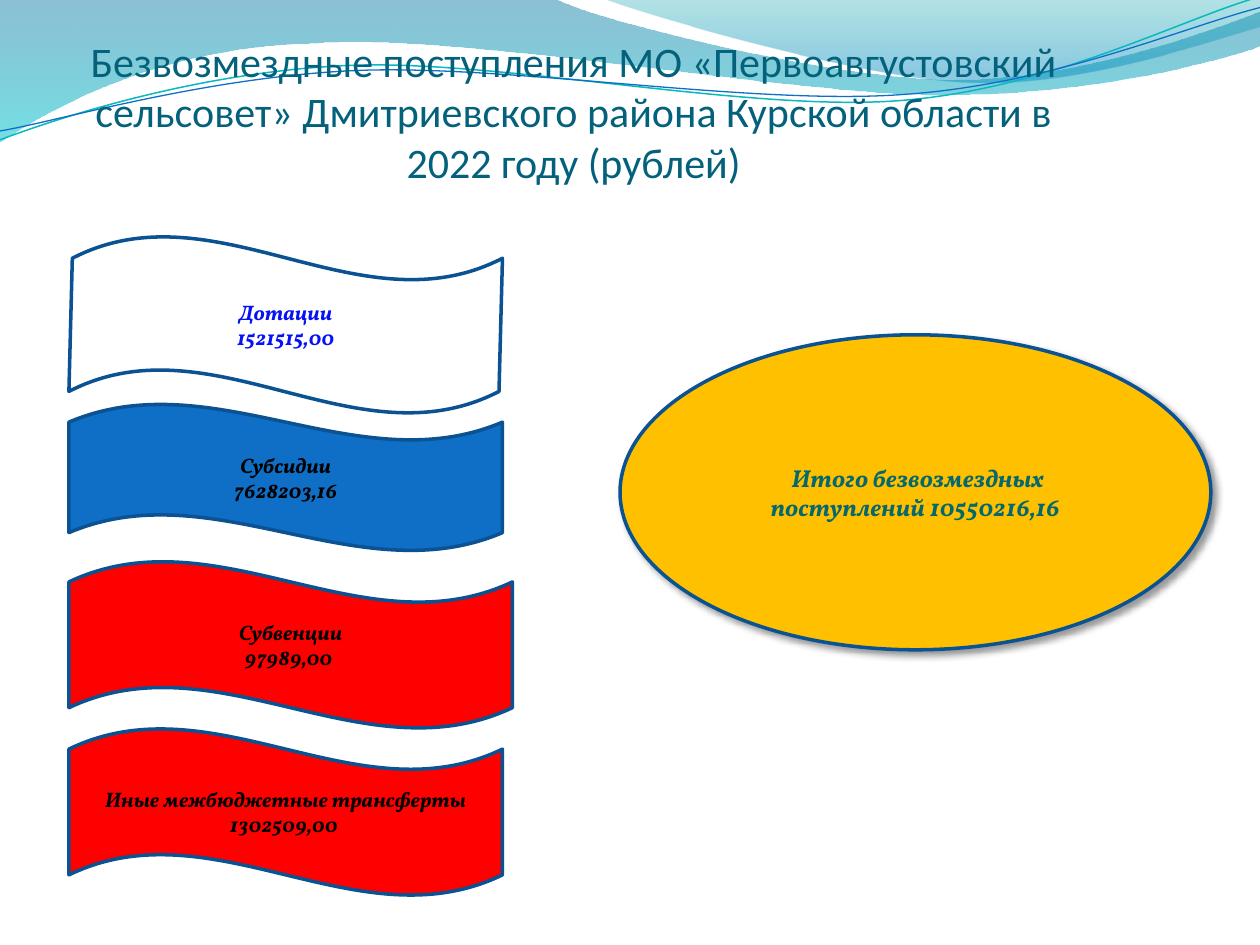
"""Build the slide on gratuitous receipts of the municipal budget."""
from dataclasses import dataclass

import lxml.etree
import pptx
import pptx.dml.color
import pptx.enum.shapes
import pptx.enum.text
import pptx.oxml
import pptx.oxml.ns
import pptx.util

COLORS = {
    "background": "FFFFFF", "title": "04617B", "outline": "0B5292", "grants": "0611F4",
    "blue": "0F6FC6", "red": "FF0000", "gold": "FFC000", "teal": "06686C",
    "black": "000000", "line_teal": "0AB8BF", "band_blue": "0074A1",
    "band_cyan": "00C6CF", "crest_teal": "00A1A9", "crest_blue": "008BBF",
}
UNIT = 2.54


@dataclass
class GradientStop:
    position: float
    color: str
    opacity: int


@dataclass
class Ribbon:
    """Start point and segments: a pair is a line, six numbers are a Bezier curve."""
    start: tuple[float, float]
    segments: list[tuple[float, ...]]
    stops: tuple[GradientStop, ...] = ()
    line_color: str = ""
    line_width: float = 0


@dataclass
class Figure:
    kind: pptx.enum.shapes.MSO_SHAPE
    box: tuple[float, float, float, float]
    fill: str
    text_color: str
    lines: tuple[str, ...]
    font_size: int = 12
    skew: float = 0
    shadow: bool = False


RIBBONS = [
    Ribbon((0, 0), [
        (4.4, -0.01), (4.76, 0.17, 6.64, 0.63, 7.58, 0.63), (8.53, 0.63, 9.58, 0.26, 10, 0.09),
        (10.01, 0.36), (9.83, 0.44, 8.7, 0.76, 7.46, 0.75), (6.22, 0.75, 3.82, 0.28, 2.57, 0.34),
        (1.29, 0.36, 0.46, 0.83, -0.01, 1.13), (0, 0)],
        stops=(GradientStop(0, "band_blue", 45), GradientStop(1, "band_cyan", 55))),
    Ribbon((4.79, -0.01), [
        (5.09, 0.11, 6.82, 0.62, 7.69, 0.65), (8.56, 0.69, 9.61, 0.32, 10, 0.21),
        (10, 0), (4.79, -0.01)],
        stops=(GradientStop(0, "crest_teal", 30), GradientStop(0.8, "crest_blue", 45))),
    Ribbon((0, 1.11), [
        (0.48, 0.93, 1.58, 0.57, 2.77, 0.52), (3.95, 0.47, 5.93, 0.89, 7.13, 0.8),
        (8.33, 0.71, 9.38, 0.15, 9.98, -0.02)], line_color="line_teal", line_width=0.85),
    Ribbon((0, 1.04), [
        (0.47, 0.96, 1.64, 0.61, 2.83, 0.56), (4.03, 0.51, 5.97, 0.84, 7.17, 0.75),
        (8.36, 0.67, 9.41, 0.21, 10, 0.06)], line_color="blue", line_width=0.75),
]

WAVE = pptx.enum.shapes.MSO_SHAPE.WAVE
FIGURES = [
    Figure(WAVE, (1.39, 4.76, 8.74, 3.58), "background", "grants",
           ("Дотации", "1521515,00"), skew=-0.004),
    Figure(WAVE, (1.39, 8.14, 8.74, 2.97), "blue", "black", ("Субсидии", "7628203,16")),
    Figure(WAVE, (1.39, 11.31, 8.94, 3.38), "red", "black", ("Субвенции", "97989,00 ")),
    Figure(WAVE, (1.39, 14.68, 8.74, 3.38), "red", "black",
           ("Иные межбюджетные трансферты", "1302509,00 ")),
    Figure(pptx.enum.shapes.MSO_SHAPE.OVAL, (12.5, 6.75, 11.91, 6.35), "gold", "teal",
           (" Итого безвозмездных поступлений 10550216,16",), font_size=14, shadow=True),
]


def rgb(name: str) -> pptx.dml.color.RGBColor:
    return pptx.dml.color.RGBColor.from_string(COLORS[name])


def position(x: float, y: float) -> tuple[int, int]:
    return pptx.util.Cm(x * UNIT), pptx.util.Cm(y * UNIT)


def bend_segments(shape, segments: list[tuple[float, ...]]) -> None:
    """Join each three line points of a curved segment into one Bezier curve."""
    steps = iter(shape.element.spPr.findall(".//" + pptx.oxml.ns.qn("a:lnTo")))
    for segment in segments:
        step = next(steps)
        if len(segment) == 2:
            continue
        curve = pptx.oxml.parse_xml(f'<a:cubicBezTo {pptx.oxml.ns.nsdecls("a")}/>')
        step.addprevious(curve)
        for control in (step, next(steps), next(steps)):
            curve.append(control[0])
            control.getparent().remove(control)


def draw_ribbon(slide, ribbon: Ribbon) -> None:
    points = [position(*segment[index:index + 2])
              for segment in ribbon.segments for index in range(0, len(segment), 2)]
    builder = slide.shapes.build_freeform(*position(*ribbon.start))
    builder.add_line_segments(points, close=bool(ribbon.stops))
    shape = builder.convert_to_shape()
    bend_segments(shape, ribbon.segments)
    shape.shadow.inherit = False
    if not ribbon.stops:
        shape.fill.background()
        shape.line.color.rgb = rgb(ribbon.line_color)
        shape.line.width = pptx.util.Pt(ribbon.line_width)
        return
    shape.line.fill.background()
    shape.fill.gradient()
    shape.fill.gradient_angle = 270
    for stop, data in zip(shape.fill.gradient_stops, ribbon.stops):
        stop.position = data.position
        stop.color.rgb = rgb(data.color)
    colors = shape.element.spPr.findall(".//" + pptx.oxml.ns.qn("a:srgbClr"))
    for color, data in zip(colors, ribbon.stops):
        alpha = lxml.etree.SubElement(color, pptx.oxml.ns.qn("a:alpha"))
        alpha.set("val", str(data.opacity * 1000))


def add_shadow(shape) -> None:
    effects = shape.element.spPr.find(pptx.oxml.ns.qn("a:effectLst"))
    effects.append(pptx.oxml.parse_xml(
        f'<a:outerShdw {pptx.oxml.ns.nsdecls("a")} blurRad="{pptx.util.Pt(4)}" '
        f'dist="{pptx.util.Pt(3)}" dir="2700000" algn="tl" rotWithShape="0">'
        f'<a:srgbClr val="{COLORS["black"]}"><a:alpha val="40000"/></a:srgbClr></a:outerShdw>'))


def add_text(paragraph, text: str, font: str, size: int, color: str, emphasis: bool) -> None:
    paragraph.alignment = pptx.enum.text.PP_ALIGN.CENTER
    run = paragraph.add_run()
    run.text = text
    run.font.name = font
    run.font.size = pptx.util.Pt(size)
    run.font.bold = run.font.italic = emphasis
    run.font.color.rgb = rgb(color)


def draw_figure(slide, figure: Figure) -> None:
    shape = slide.shapes.add_shape(figure.kind, *map(pptx.util.Cm, figure.box))
    shape.shadow.inherit = False
    shape.fill.solid()
    shape.fill.fore_color.rgb = rgb(figure.fill)
    shape.line.color.rgb = rgb("outline")
    shape.line.width = pptx.util.Pt(2)
    if figure.skew:
        shape.adjustments[1] = figure.skew
    if figure.shadow:
        add_shadow(shape)
    frame = shape.text_frame
    frame.word_wrap = True
    frame.vertical_anchor = pptx.enum.text.MSO_ANCHOR.MIDDLE
    for index, line in enumerate(figure.lines):
        paragraph = frame.add_paragraph() if index else frame.paragraphs[0]
        add_text(paragraph, line, "Vollkorn", figure.font_size, figure.text_color, True)


def draw_title(slide, text: str) -> None:
    title = slide.shapes.title
    title.left, title.top, title.width, title.height = map(
        pptx.util.Cm, (1.19, 0.58, 20.75, 3.18))
    slide.shapes.element.append(title.element)
    frame = title.text_frame
    frame.word_wrap = True
    frame.auto_size = pptx.enum.text.MSO_AUTO_SIZE.NONE
    frame.vertical_anchor = pptx.enum.text.MSO_ANCHOR.BOTTOM
    frame.margin_left = frame.margin_right = frame.margin_bottom = 0
    frame.margin_top = pptx.util.Cm(0.13)
    add_text(frame.paragraphs[0], text, "Calibri", 24, "title", False)


def main() -> None:
    presentation = pptx.Presentation()
    presentation.slide_width = pptx.util.Cm(25.4)
    presentation.slide_height = pptx.util.Cm(19.05)
    slide = presentation.slides.add_slide(presentation.slide_layouts[5])
    slide.background.fill.solid()
    slide.background.fill.fore_color.rgb = rgb("background")
    for ribbon in RIBBONS:
        draw_ribbon(slide, ribbon)
    draw_title(slide, "Безвозмездные поступления МО «Первоавгустовский сельсовет» "
                      "Дмитриевского района Курской области в 2022 году (рублей)")
    for figure in FIGURES:
        draw_figure(slide, figure)
    presentation.save("out.pptx")


if __name__ == "__main__":
    main()
